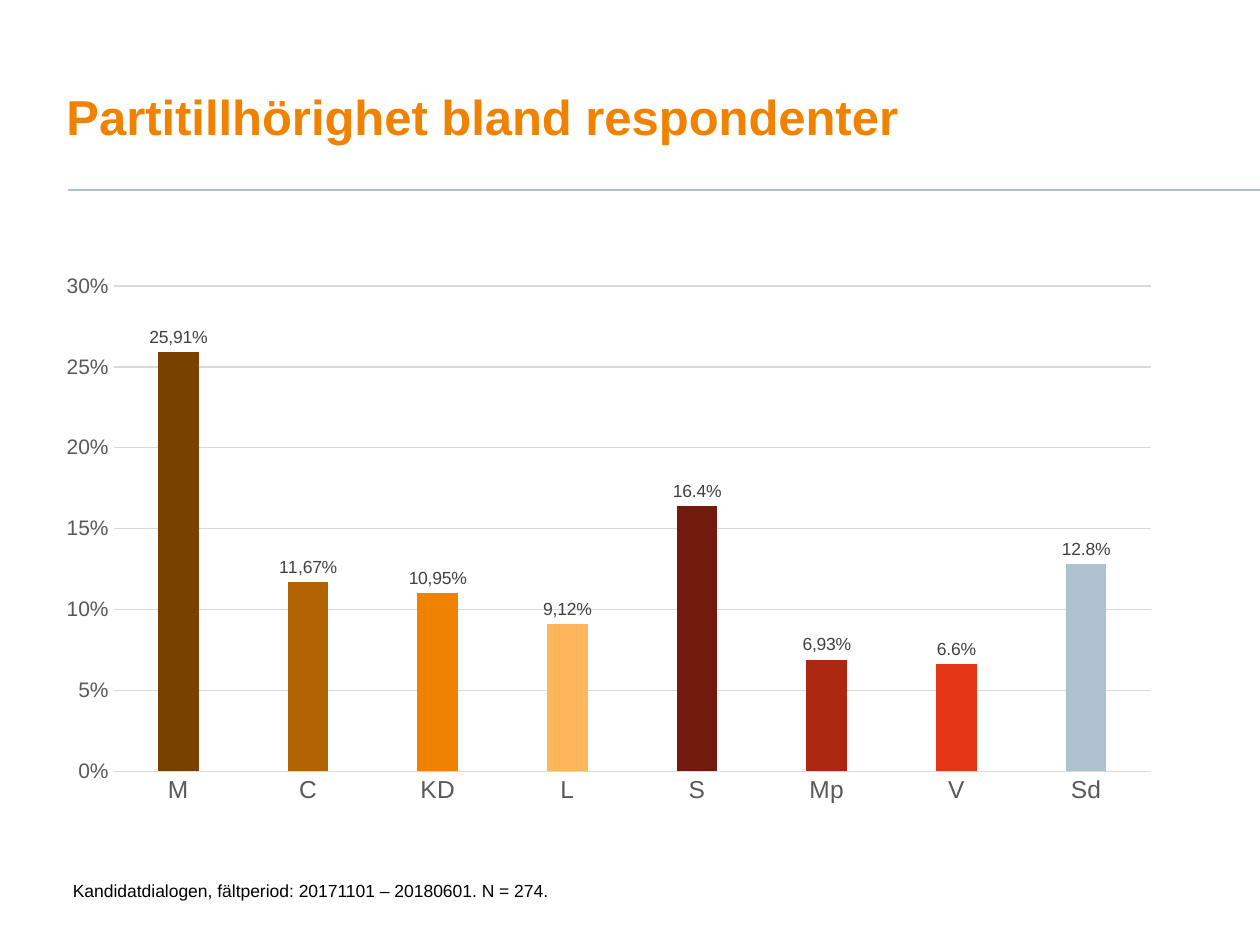
import pptx
import pptx.chart.data
import pptx.dml.color
import pptx.enum.chart
import pptx.enum.shapes
import pptx.enum.text
import pptx.oxml
import pptx.util
from pptx.util import Cm

# Content
HEADING = "Partitillhörighet bland respondenter"
SOURCE_NOTE = "Kandidatdialogen, fältperiod: 20171101 – 20180601. N = 274."
# party, share, bar colour, written label (None: formatted value)
PARTIES = [
    ("M", 0.259, "784100", "25,91%"),
    ("C", 0.117, "B36200", "11,67%"),
    ("KD", 0.11, "EF8200", "10,95%"),
    ("L", 0.091, "FFB55C", "9,12%"),
    ("S", 0.164, "721B0C", None),
    ("Mp", 0.069, "AC2811", "6,93%"),
    ("V", 0.066, "E53517", None),
    ("Sd", 0.128, "AEC1CF", None),
]
PLOT_AREA = {"x": 0.066, "y": 0.021, "w": 0.92, "h": 0.868}
GRID_GREY, AXIS_GREY, LABEL_GREY = "D9D9D9", "595959", "404040"


def rgb(colour):
    return pptx.dml.color.RGBColor.from_string(colour)


def set_all(target, values):
    for name, value in values.items():
        setattr(target, name, value)


def style_font(font, size, colour, bold=False):
    set_all(font, {"name": "Arial", "size": pptx.util.Pt(size), "bold": bold})
    font.color.rgb = rgb(colour)


def style_line(line, colour, width):
    line.color.rgb = rgb(colour)
    line.width = pptx.util.Pt(width)


def add_text(slide, text, box, size, colour, bold=False, **frame_format):
    frame = slide.shapes.add_textbox(*map(Cm, box)).text_frame
    set_all(frame, {"word_wrap": True, **frame_format})
    paragraph = frame.paragraphs[0]
    run = paragraph.add_run()
    run.text = text
    style_font(run.font, size, colour, bold)
    return paragraph


deck = pptx.Presentation()
set_all(deck, {"slide_width": Cm(25.4), "slide_height": Cm(19.05)})
slide = deck.slides.add_slide(deck.slide_layouts[6])

# Heading and rule
heading = add_text(slide, HEADING, (1.34, 0.79, 18.19, 2.29), 28, "EF8200", True,
                   margin_left=0, margin_top=0,
                   vertical_anchor=pptx.enum.text.MSO_ANCHOR.BOTTOM)
heading.line_spacing = 0.9

rule = slide.shapes.add_connector(pptx.enum.shapes.MSO_CONNECTOR.STRAIGHT,
                                  Cm(1.37), Cm(3.83), Cm(25.4), Cm(3.83))
style_line(rule.line, "AEC1CF", 1)
rule_properties = rule.line._get_or_add_ln().getparent()
rule_properties.append(pptx.oxml.parse_xml(
    '<a:effectLst xmlns:a="http://schemas.openxmlformats.org/drawingml/2006/main"/>'))

# Chart of party shares
shares = pptx.chart.data.CategoryChartData(number_format="0.0%")
shares.categories = [party for party, *_ in PARTIES]
shares.add_series("Series 1", [share for _, share, *_ in PARTIES])
chart = slide.shapes.add_chart(
    pptx.enum.chart.XL_CHART_TYPE.COLUMN_CLUSTERED,
    Cm(0.79), Cm(5.53), Cm(22.73), Cm(11.27), shares).chart
set_all(chart, {"has_legend": False, "has_title": False})
style_font(chart.font, 10, "000000")

bars = chart.plots[0]
set_all(bars, {"gap_width": 219, "overlap": -27, "vary_by_categories": False})

# Axes
party_axis, share_axis = chart.category_axis, chart.value_axis
for axis, size in ((party_axis, 14), (share_axis, 12)):
    set_all(axis, {"major_tick_mark": pptx.enum.chart.XL_TICK_MARK.NONE,
                   "minor_tick_mark": pptx.enum.chart.XL_TICK_MARK.NONE})
    style_font(axis.tick_labels.font, size, AXIS_GREY)
style_line(party_axis.format.line, GRID_GREY, 0.75)
set_all(share_axis, {"minimum_scale": 0, "maximum_scale": 0.3, "major_unit": 0.05})
set_all(share_axis.tick_labels, {"number_format": "0%", "number_format_is_linked": False})
share_axis.format.line.fill.background()
style_line(share_axis.major_gridlines.format.line, GRID_GREY, 0.75)

# Bars and their labels
outside_end = pptx.enum.chart.XL_LABEL_POSITION.OUTSIDE_END
series = bars.series[0]
series.invert_if_negative = False
series.format.fill.solid()
series.format.fill.fore_color.rgb = rgb("AEC1CF")
set_all(series.data_labels, {"show_value": True, "number_format": "0.0%",
                             "number_format_is_linked": False, "position": outside_end})
style_font(series.data_labels.font, 10, LABEL_GREY)
for index, (_, _, colour, label) in enumerate(PARTIES):
    point = series.points[index]
    point.format.fill.solid()
    point.format.fill.fore_color.rgb = rgb(colour)
    if label:
        run = point.data_label.text_frame.paragraphs[0].add_run()
        run.text = label
        style_font(run.font, 10, LABEL_GREY)
        point.data_label.position = outside_end

# Fixed inner plot area
plot_area = chart._chartSpace.chart.plotArea
for old_layout in plot_area.findall("{*}layout"):
    plot_area.remove(old_layout)
modes = "".join(f'<c:{side}Mode val="edge"/>' for side in "xy")
extents = "".join(f'<c:{side} val="{part}"/>' for side, part in PLOT_AREA.items())
plot_area.insert(0, pptx.oxml.parse_xml(
    '<c:layout xmlns:c="http://schemas.openxmlformats.org/drawingml/2006/chart">'
    f'<c:manualLayout><c:layoutTarget val="inner"/>{modes}{extents}</c:manualLayout></c:layout>'))

# Source note
add_text(slide, SOURCE_NOTE, (1.22, 17.62, 20.27, 0.69), 10, "000000",
         auto_size=pptx.enum.text.MSO_AUTO_SIZE.SHAPE_TO_FIT_TEXT)

deck.save("out.pptx")
